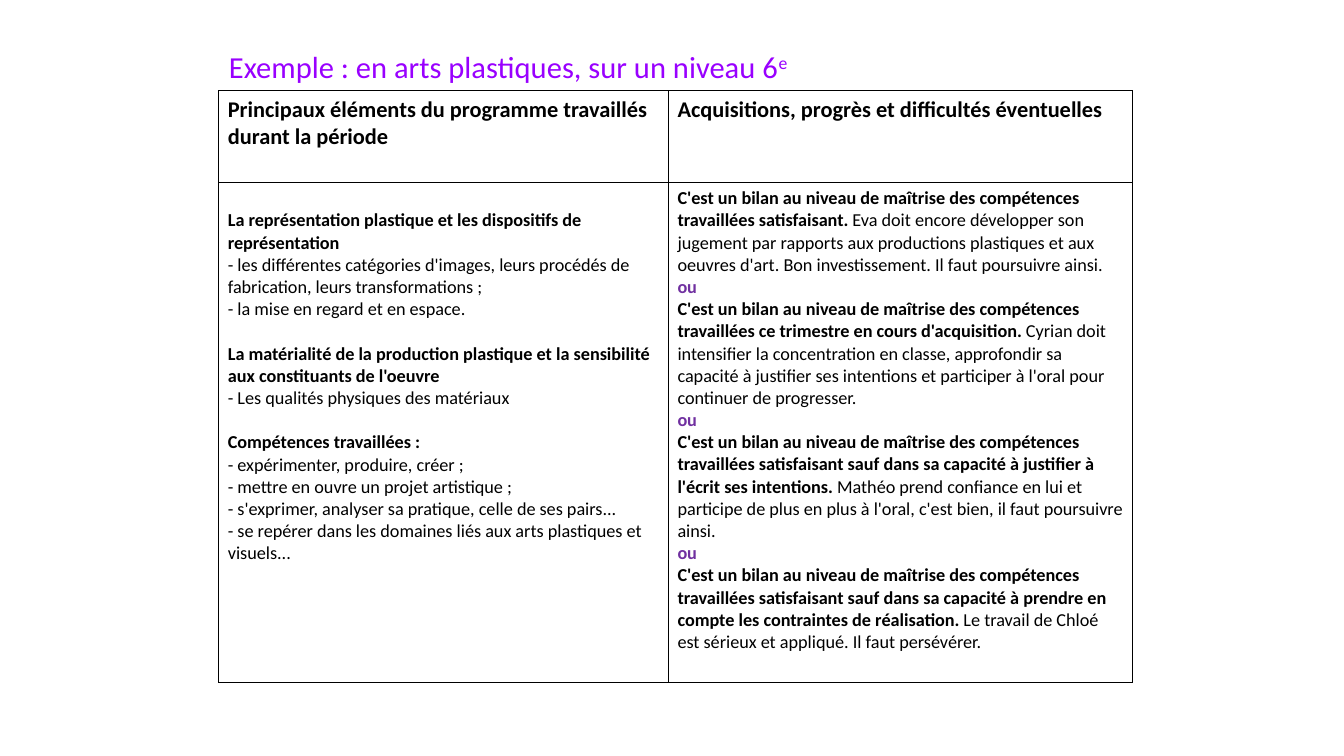
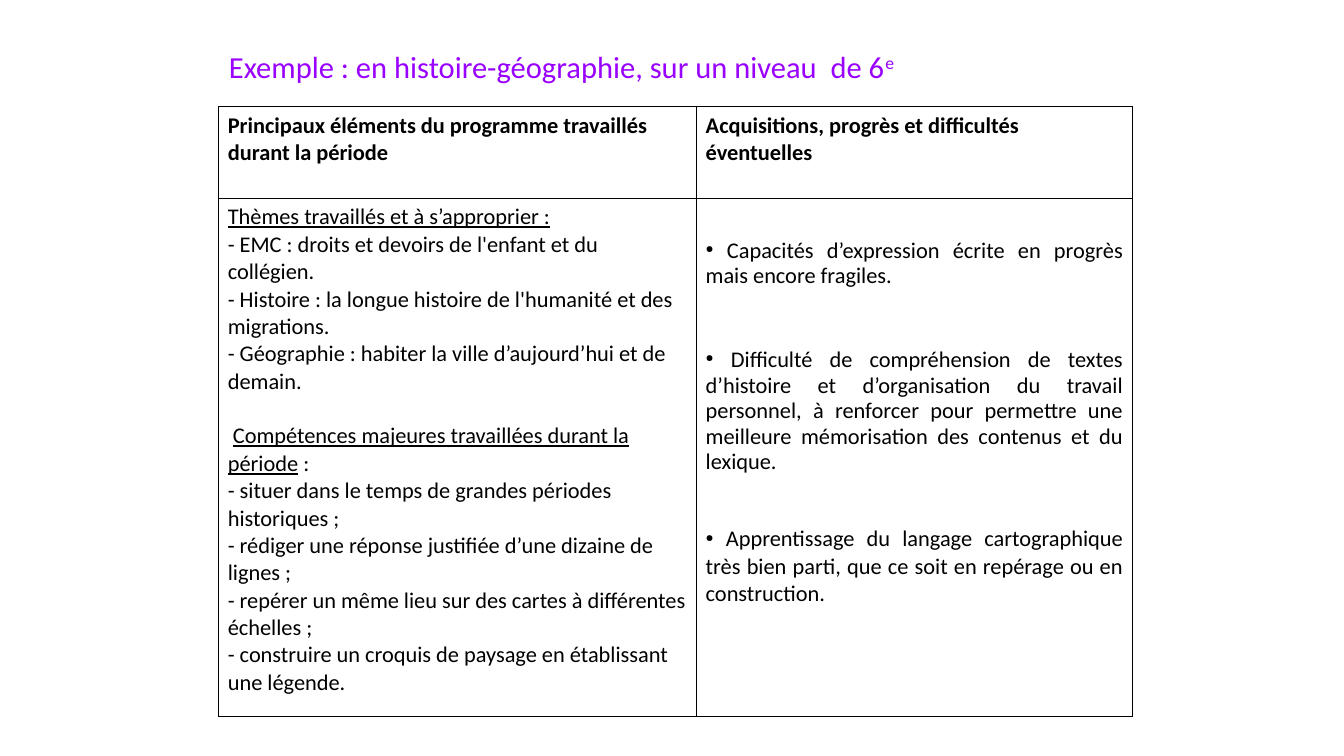
from lxml.etree import SubElement
from pptx import Presentation
from pptx.dml.color import RGBColor as RGB
from pptx.enum.text import MSO_ANCHOR as ANCHOR, PP_ALIGN as ALIGN
from pptx.oxml.ns import qn
from pptx.util import Inches, Pt

BLACK = RGB(0x00, 0x00, 0x00)
VIOLET = RGB(0x99, 0x00, 0xFF)
PURPLE = RGB(0x70, 0x30, 0xA0)
FONT = "Calibri"
LEFT = 2.17

# Text styles
PLAIN = dict(bold=False, underline=False)
BOLD = dict(bold=True, underline=False)
LINED = dict(bold=False, underline=True)
CHOICE = dict(bold=True, underline=False, color=PURPLE)

HEADS = [
    "Principaux éléments du programme travaillés durant la période",
    "Acquisitions, progrès et difficultés éventuelles",
]


def para(*runs, **form):
    return runs, form


def plain(*lines):
    return [para((line, PLAIN)) for line in lines]


def add_run(par, text, size, color=BLACK, **style):
    run = par.add_run()
    run.text = text
    run.font.color.rgb = color
    for key, value in dict(name=FONT, size=Pt(size), **style).items():
        setattr(run.font, key, value)
    return run


def add_dot(par):
    props = par._p.get_or_add_pPr()
    props.set("marL", "0")
    props.set("indent", "0")
    SubElement(props, qn("a:buSzPct"), val="45000")
    SubElement(props, qn("a:buChar"), char="●")


def add_rule(cell):
    props = cell._tc.get_or_add_tcPr()
    for side in "LRTB":
        line = SubElement(props, qn("a:ln" + side), w=str(Pt(1)))
        fill = SubElement(line, qn("a:solidFill"))
        SubElement(fill, qn("a:srgbClr"), val=str(BLACK))


def fill_cell(cell, paras, size, top=0.05):
    add_rule(cell)
    cell.fill.background()
    margins = dict(left=0.09, top=top, right=0.09, bottom=0.05)
    for side, value in margins.items():
        setattr(cell, "margin_" + side, Inches(value))
    frame = cell.text_frame
    for i, (runs, form) in enumerate(paras):
        par = frame.paragraphs[0] if i == 0 else frame.add_paragraph()
        form = dict(form)
        dot = form.pop("dot", False)
        for key, value in form.items():
            setattr(par, key, value)
        if dot:
            add_dot(par)
        for text, style in runs:
            add_run(par, text, size, **style)


def add_title(slide, text):
    title = slide.shapes.title
    box = dict(left=LEFT, top=0.47, width=9, height=0.43)
    for key, value in box.items():
        setattr(title, key, Inches(value))
    frame = title.text_frame
    frame.word_wrap = True
    frame.vertical_anchor = ANCHOR.MIDDLE
    par = frame.paragraphs[0]
    par.alignment = ALIGN.LEFT
    par.line_spacing = 0.9
    add_run(par, text, 21.8, VIOLET)
    mark = add_run(par, "e", 21.8, VIOLET)
    mark._r.get_or_add_rPr().set("baseline", "30000")


def add_grid(slide, top, cols, rows, size, bodies, tops):
    box = map(Inches, (LEFT, top, sum(cols), sum(rows)))
    table = slide.shapes.add_table(2, 2, *box).table
    for col, width in zip(table.columns, cols):
        col.width = Inches(width)
    for row, height in zip(table.rows, rows):
        row.height = Inches(height)
    for i, head in enumerate(HEADS):
        fill_cell(table.cell(0, i), [para((head, BOLD))], 16)
        fill_cell(table.cell(1, i), bodies[i], size, tops[i])


def add_slide(deck, title, **grid):
    slide = deck.slides.add_slide(deck.slide_layouts[5])
    add_title(slide, title)
    add_grid(slide, **grid)


def art_slide(deck):
    gap = dict(space_before=Pt(15.9))
    themes = [
        para(("La représentation plastique et les dispositifs de représentation", BOLD)),
        *plain(
            "- les différentes catégories d'images, leurs procédés de fabrication, leurs transformations ;",
            "- la mise en regard et en espace.",
        ),
        para(("La matérialité de la production plastique et la sensibilité aux constituants de l'oeuvre", BOLD), **gap),
        *plain("- Les qualités physiques des matériaux"),
        para(("Compétences travaillées : ", BOLD), **gap),
        *plain(
            "- expérimenter, produire, créer ;",
            "- mettre en ouvre un projet artistique ;",
            "- s'exprimer, analyser sa pratique, celle de ses pairs...",
            "- se repérer dans les domaines liés aux arts plastiques et visuels...",
        ),
    ]
    # Each review: ending of the shared opening, then the remark
    start = "C'est un bilan au niveau de maîtrise des compétences travaillées "
    reviews = [
        ("satisfaisant.",
         " Eva doit encore développer son jugement par rapports aux productions plastiques et aux oeuvres d'art. Bon investissement. Il faut poursuivre ainsi."),
        ("ce trimestre en cours d'acquisition.",
         " Cyrian doit intensifier la concentration en classe, approfondir sa capacité à justifier ses intentions et participer à l'oral pour continuer de progresser."),
        ("satisfaisant sauf dans sa capacité à justifier à l'écrit ses intentions.",
         " Mathéo prend confiance en lui et participe de plus en plus à l'oral, c'est bien, il faut poursuivre ainsi."),
        ("satisfaisant sauf dans sa capacité à prendre en compte les contraintes de réalisation.",
         " Le travail de Chloé est sérieux et appliqué. Il faut persévérer."),
    ]
    notes = []
    for level, remark in reviews:
        if notes:
            notes.append(para(("ou", CHOICE)))
        notes.append(para((start + level, BOLD), (remark, PLAIN)))
    add_slide(
        deck, "Exemple : en arts plastiques, sur un niveau 6",
        top=0.9, cols=(4.46, 4.6), rows=(0.91, 4.96), size=13,
        bodies=(themes, notes), tops=(0.27, 0.05),
    )


def history_slide(deck):
    themes = [
        para(("Thèmes travaillés et à s’approprier :", LINED)),
        *plain(
            "- EMC : droits et devoirs de l'enfant et du collégien.",
            "- Histoire : la longue histoire de l'humanité et des migrations.",
            "- Géographie : habiter la ville d’aujourd’hui et de demain.",
        ),
        para((" ", PLAIN), ("Compétences majeures travaillées durant la période", LINED),
             (" :", PLAIN), space_before=Pt(19.5)),
        *plain(
            "- situer dans le temps de grandes périodes historiques ;",
            "- rédiger une réponse justifiée d’une dizaine de lignes ;",
            "- repérer un même lieu sur des cartes à différentes échelles ;",
            "- construire un croquis de paysage en établissant une légende.",
        ),
    ]
    # Remark, gap above in points, line spacing
    remarks = [
        (" Capacités d’expression écrite en progrès mais encore fragiles.", 0, 0.93),
        (" Difficulté de compréhension de textes d’histoire et d’organisation du travail personnel, à renforcer pour permettre une meilleure mémorisation des contenus et du lexique.", 42, 0.93),
        (" Apprentissage du langage cartographique très bien parti, que ce soit en repérage ou en construction.", 36, 1.0),
    ]
    notes = [
        para((text, PLAIN), dot=True, alignment=ALIGN.JUSTIFY,
             space_before=Pt(gap), line_spacing=lead)
        for text, gap, lead in remarks
    ]
    add_slide(
        deck, "Exemple : en histoire-géographie, sur un niveau  de 6",
        top=1.06, cols=(4.74, 4.32), rows=(0.91, 5.14), size=16,
        bodies=(themes, notes), tops=(0.05, 0.39),
    )


def main():
    deck = Presentation()
    deck.slide_width = Inches(13.33)
    deck.slide_height = Inches(7.5)
    art_slide(deck)
    history_slide(deck)
    deck.save("out.pptx")


if __name__ == "__main__":
    main()
